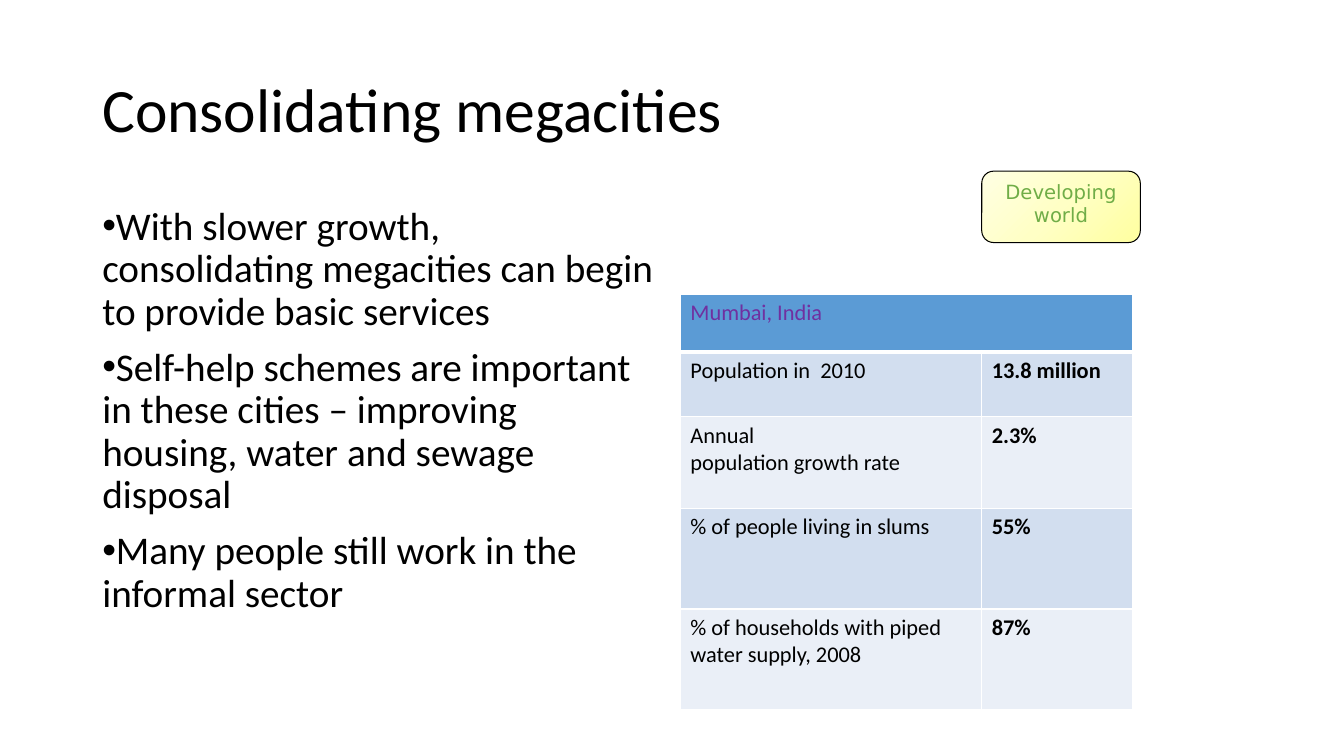
from copy import deepcopy
from dataclasses import dataclass

from lxml.etree import SubElement
from pptx import Presentation
from pptx.dml.color import RGBColor as RGB
from pptx.enum.shapes import MSO_SHAPE as SHAPE
from pptx.enum.text import MSO_ANCHOR as ANCHOR, PP_ALIGN as ALIGN
from pptx.oxml.ns import qn
from pptx.util import Emu, Pt


@dataclass(frozen=True)
class Theme:
    font: str = "Calibri"
    badge_font: str = "DejaVu Sans"
    title_size: int = 44
    body_size: int = 28
    table_size: int = 16
    badge_size: int = 14
    text: str = "000000"
    header_text: str = "7030A0"
    badge_text: str = "70AD47"
    header: str = "5B9BD5"
    bands: tuple = ("D2DEEF", "EAEFF7")
    border: str = "FFFFFF"
    badge_stops: tuple = ((0, "FFFFA0"), (0.5, "FFFFC5"), (1, "FFFFE3"))


T = Theme()
POINTS = (
    "With slower growth, consolidating megacities can begin to provide basic services",
    "Self-help schemes are important in these cities – improving housing, water and sewage disposal",
    "Many people still work in the informal sector",
)
COLUMNS = (287, 144)
ROW_HEIGHTS = (55, 62, 87, 96, 96)
MUMBAI = (
    ("Mumbai, India", ""),
    ("Population in  2010", "13.8 million"),
    ("Annual\npopulation growth rate", "2.3%"),
    ("% of people living in slums", "55%"),
    ("% of households with piped water supply, 2008", "87%"),
)


def px(n):
    return Emu(n * 9525)


def style(p, size, color=T.text, font=T.font, bold=False):
    for r in p.runs:
        f = r.font
        f.name, f.size, f.bold = font, Pt(size), bold
        f.color.rgb = RGB.from_string(color)


def add_text(slide, box, text, size, anchor=ANCHOR.TOP):
    tf = slide.shapes.add_textbox(*map(px, box)).text_frame
    tf.word_wrap = True
    tf.vertical_anchor = anchor
    tf.text = text
    for p in tf.paragraphs:
        p.line_spacing = 0.9
        style(p, size)
    return tf


def add_title(slide, box):
    add_text(slide, box, "Consolidating megacities", T.title_size, ANCHOR.MIDDLE)


def add_points(slide, box):
    tf = add_text(slide, box, "\n".join(POINTS), T.body_size)
    for p in tf.paragraphs:
        p.space_before = Pt(10)
        pPr = p._p.get_or_add_pPr()
        pPr.set("marL", "0")
        pPr.set("indent", "0")
        SubElement(pPr, qn("a:buFont"), typeface="Arial")
        SubElement(pPr, qn("a:buChar"), char="•")


def add_badge(slide, box):
    sp = slide.shapes.add_shape(SHAPE.ROUNDED_RECTANGLE, *map(px, box))
    sp.shadow.inherit = False
    sp.line.color.rgb = RGB.from_string(T.text)
    sp.line.width = Pt(0.75)
    # Three-stop gradient, darkest at the lower right
    sp.fill.gradient()
    sp.fill.gradient_angle = 135
    stops = sp._element.spPr.find(".//" + qn("a:gsLst"))
    stops.insert(1, deepcopy(stops[0]))
    for stop, (position, color) in zip(sp.fill.gradient_stops, T.badge_stops):
        stop.position = position
        stop.color.rgb = RGB.from_string(color)
    tf = sp.text_frame
    tf.word_wrap = True
    tf.vertical_anchor = ANCHOR.TOP
    tf.text = "Developing world"
    p = tf.paragraphs[0]
    p.alignment = ALIGN.CENTER
    style(p, T.badge_size, T.badge_text, T.badge_font)


def paint_cell(cell, fill, bottom=1):
    # Borders come before the fill in a cell's properties
    tcPr = cell._tc.get_or_add_tcPr()
    for side, width in (("L", 1), ("R", 1), ("T", 1), ("B", bottom)):
        ln = SubElement(tcPr, qn(f"a:ln{side}"), w=str(Pt(width)))
        solid = SubElement(ln, qn("a:solidFill"))
        SubElement(solid, qn("a:srgbClr"), val=T.border)
    cell.fill.solid()
    cell.fill.fore_color.rgb = RGB.from_string(fill)


def add_city_table(slide, left, top):
    size = sum(COLUMNS), sum(ROW_HEIGHTS)
    shape = slide.shapes.add_table(len(MUMBAI), len(COLUMNS), *map(px, (left, top, *size)))
    table = shape.table
    for column, width in zip(table.columns, COLUMNS):
        column.width = px(width)
    for row, height in zip(table.rows, ROW_HEIGHTS):
        row.height = px(height)
    table.cell(0, 0).merge(table.cell(0, 1))
    for i, values in enumerate(MUMBAI):
        is_header = i == 0
        fill = T.header if is_header else T.bands[(i - 1) % 2]
        color = T.header_text if is_header else T.text
        for j, value in enumerate(values):
            cell = table.cell(i, j)
            cell.text = value
            paint_cell(cell, fill, 3 if is_header else 1)
            for p in cell.text_frame.paragraphs:
                style(p, T.table_size, color, bold=j == 1)


def main():
    prs = Presentation()
    prs.slide_width, prs.slide_height = px(1280), px(720)
    slide = prs.slides.add_slide(prs.slide_layouts[6])
    add_title(slide, (88, 38, 1104, 139))
    add_points(slide, (88, 192, 544, 457))
    add_badge(slide, (935, 163, 151, 68))
    add_city_table(slide, 648, 280)
    prs.save("out.pptx")


if __name__ == "__main__":
    main()
